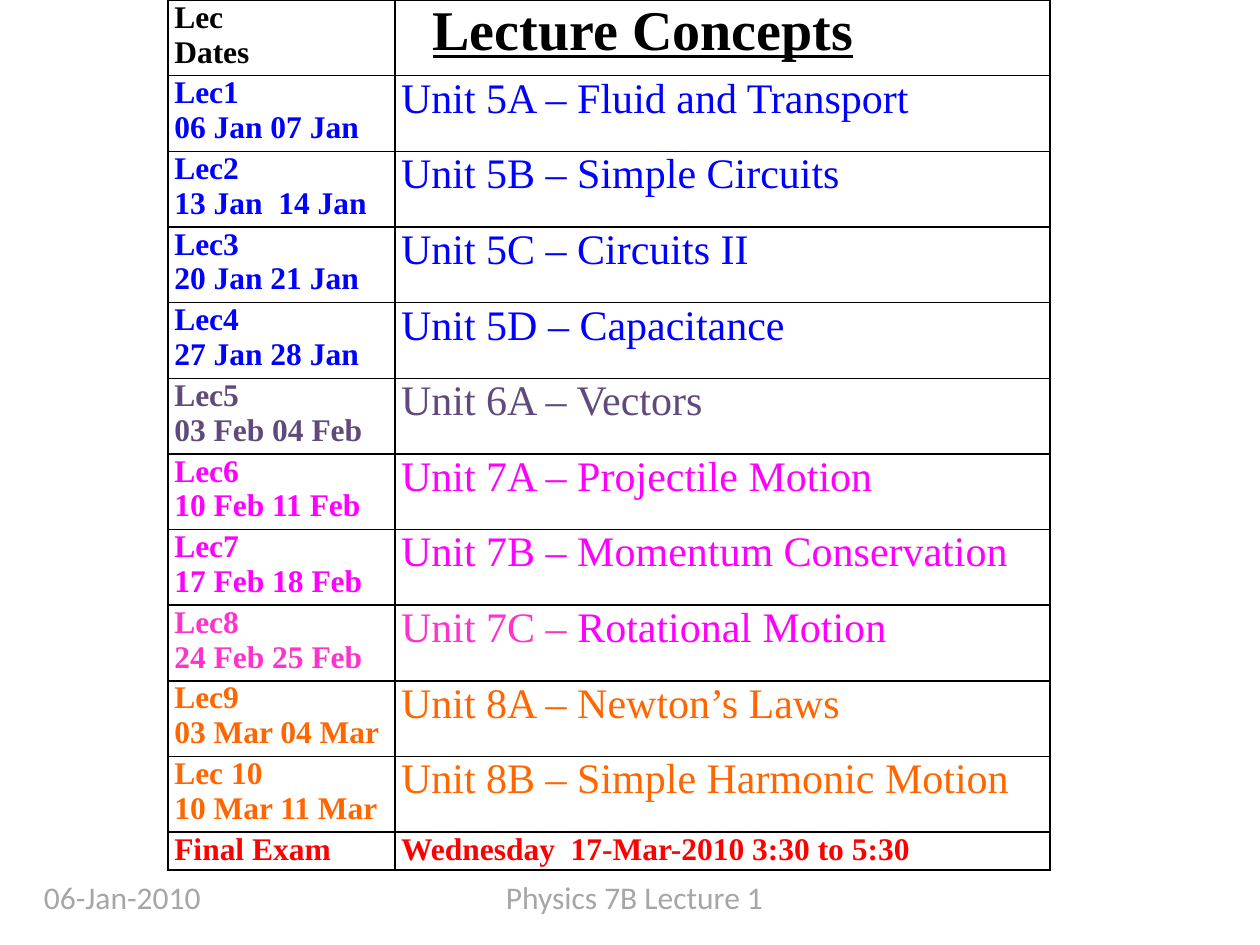
import pptx
import pptx.dml.color
import pptx.enum.text
import pptx.oxml
import pptx.oxml.ns
import pptx.util
from dataclasses import dataclass

Pt = pptx.util.Pt


@dataclass(frozen=True)
class Theme:
    serif: str = "Times New Roman"
    sans: str = "Calibri"
    small: int = 18
    unit: int = 24
    title: int = 32
    black: str = "000000"
    grey: str = "A6A6A6"
    blue: str = "0000FF"
    purple: str = "604A7B"
    magenta: str = "FF00FF"
    pink: str = "FF33CC"
    orange: str = "FF6600"
    red: str = "FF0000"


class Deck:
    def __init__(self, theme):
        self.theme = theme
        self.prs = pptx.Presentation()
        self.prs.slide_width, self.prs.slide_height = Pt(720), Pt(540)
        self.slide = self.prs.slides.add_slide(self.prs.slide_layouts[6])

    def style(self, run, size, color, bold=False, line=False, face=None):
        font = run.font
        font.name = face or self.theme.serif
        font.size = Pt(size)
        font.bold = bold
        font.underline = line
        font.color.rgb = pptx.dml.color.RGBColor.from_string(color)

    def label(self, text, left, top, width, height, wrap=True):
        box = self.slide.shapes.add_textbox(Pt(left), Pt(top), Pt(width), Pt(height))
        frame = box.text_frame
        frame.text = text
        frame.word_wrap = wrap
        frame.auto_size = pptx.enum.text.MSO_AUTO_SIZE.SHAPE_TO_FIT_TEXT
        self.style(frame.paragraphs[0].runs[0], self.theme.small,
                   self.theme.grey, face=self.theme.sans)

    def table(self, left, top, cols, rows):
        shape = self.slide.shapes.add_table(
            len(rows), len(cols), Pt(left), Pt(top), Pt(sum(cols)), Pt(sum(rows)))
        grid = shape.table
        grid.first_row = grid.horz_banding = False
        for col, width in zip(grid.columns, cols):
            col.width = Pt(width)
        for row, height in zip(grid.rows, rows):
            row.height = Pt(height)
        for cell in grid.iter_cells():
            cell.margin_left = cell.margin_right = Pt(3.6)
            cell.margin_top = cell.margin_bottom = 0
            self.border(cell)
            cell.fill.background()
        return grid

    def border(self, cell):
        props = cell._tc.get_or_add_tcPr()
        for side in ("lnL", "lnR", "lnT", "lnB"):
            props.append(pptx.oxml.parse_xml(
                f'<a:{side} {pptx.oxml.ns.nsdecls("a")} w="{Pt(1)}"><a:solidFill>'
                f'<a:srgbClr val="{self.theme.black}"/></a:solidFill></a:{side}>'))

    def entry(self, cell, text, size, color, bold=True, line=False):
        """Fill a cell; each line of the text is a paragraph."""
        cell.text_frame.text = text
        for par in cell.text_frame.paragraphs:
            for run in par.runs:
                self.style(run, size, color, bold, line)

    def save(self):
        self.prs.save("out.pptx")


def main():
    theme = Theme()
    deck = Deck(theme)
    deck.label("Physics 7B Lecture 1", 282, 498, 163.5, 29, wrap=False)
    deck.label("06-Jan-2010", 18, 498, 120, 29)

    units = [
        ("Lec1\n06 Jan 07 Jan", "Unit 5A – Fluid and Transport", theme.blue),
        ("Lec2\n13 Jan  14 Jan", "Unit 5B – Simple Circuits", theme.blue),
        ("Lec3\n20 Jan 21 Jan", "Unit 5C – Circuits II", theme.blue),
        ("Lec4\n27 Jan 28 Jan", "Unit 5D – Capacitance", theme.blue),
        ("Lec5\n03 Feb 04 Feb", "Unit 6A – Vectors", theme.purple),
        ("Lec6\n10 Feb 11 Feb", "Unit 7A – Projectile Motion", theme.magenta),
        ("Lec7\n17 Feb 18 Feb", "Unit 7B – Momentum Conservation", theme.magenta),
        ("Lec8\n24 Feb 25 Feb", "Unit 7C – ", theme.pink),
        ("Lec9\n03 Mar 04 Mar", "Unit 8A – Newton’s Laws", theme.orange),
        ("Lec 10\n10 Mar 11 Mar", "Unit 8B – Simple Harmonic Motion", theme.orange),
    ]
    last = len(units) + 1
    grid = deck.table(96, 0, [129.6, 374.4], [43.2] * last + [21.6])

    deck.entry(grid.cell(0, 0), "Lec\nDates", theme.small, theme.black)
    head = grid.cell(0, 1)
    deck.entry(head, "Lecture Concepts", theme.title, theme.black, line=True)
    head.text_frame.paragraphs[0]._p.get_or_add_pPr().set("marL", str(Pt(18)))

    for row, (dates, topic, color) in enumerate(units, 1):
        deck.entry(grid.cell(row, 0), dates, theme.small, color)
        deck.entry(grid.cell(row, 1), topic, theme.unit, color, bold=False)

    motion = grid.cell(8, 1).text_frame.paragraphs[0].add_run()
    motion.text = "Rotational Motion"
    deck.style(motion, theme.unit, theme.magenta)

    deck.entry(grid.cell(last, 0), "Final Exam", theme.small, theme.red)
    deck.entry(grid.cell(last, 1), "Wednesday  17-Mar-2010 3:30 to 5:30",
               theme.small, theme.red)
    deck.save()


if __name__ == "__main__":
    main()
